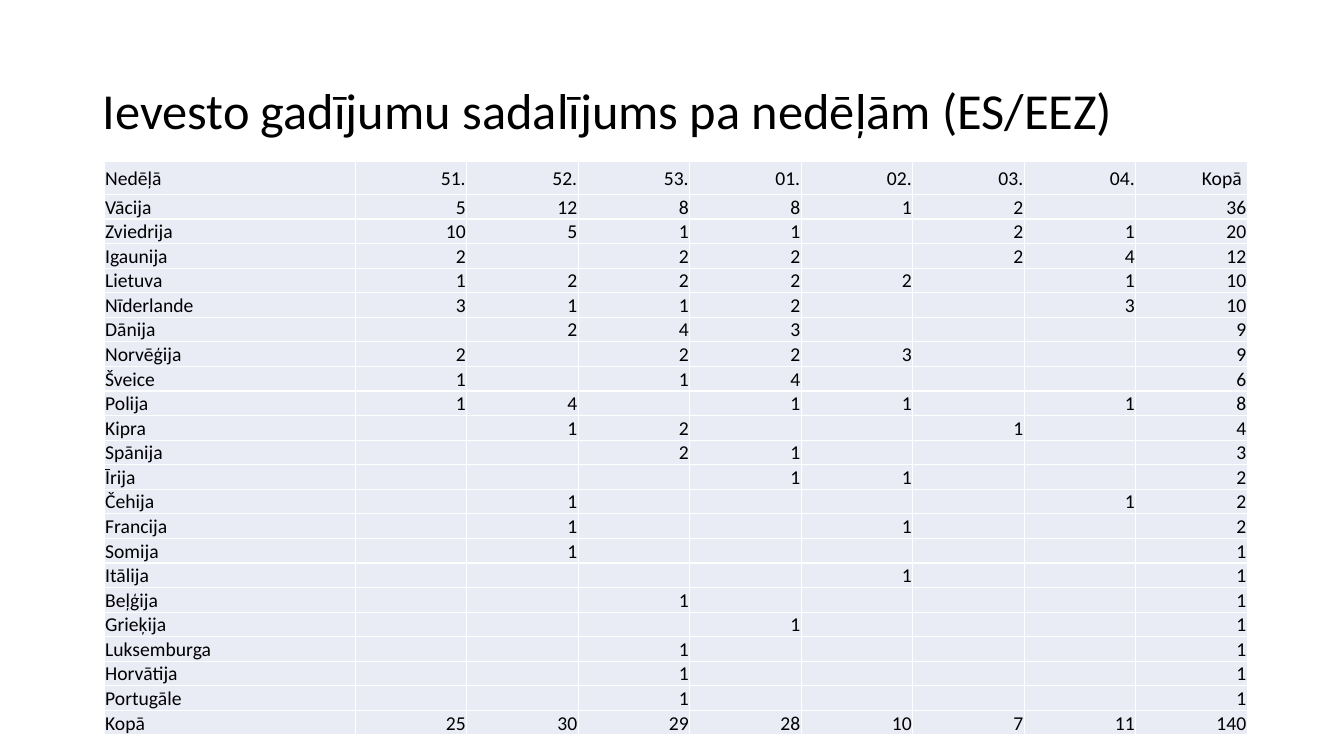
from dataclasses import dataclass

from lxml.etree import SubElement
from pptx import Presentation
from pptx.dml.color import RGBColor
from pptx.enum.text import MSO_ANCHOR, PP_ALIGN
from pptx.oxml.ns import qn
from pptx.util import Inches, Pt

COLORS = {"text": "000000", "cell": "E9EBF5", "border": "FFFFFF"}
FONT = "Calibri"
TITLE_SIZE, CELL_SIZE = 36, 14
SLIDE_W, SLIDE_H = Inches(13.33), Inches(7.5)
WEEKS = ["51.", "52.", "53.", "01.", "02.", "03.", "04."]


@dataclass
class Area:
    left: float
    top: float
    width: float
    height: float

    def box(self) -> tuple[int, int, int, int]:
        return (share_x(self.left), share_y(self.top),
                share_x(self.width), share_y(self.height))


@dataclass
class Country:
    name: str
    cases: tuple[int, ...]

    def texts(self) -> list[str]:
        counts = [str(n) if n else "" for n in self.cases]
        return [self.name, *counts, str(sum(self.cases))]


COUNTRIES = [
    Country("Vācija", (5, 12, 8, 8, 1, 2, 0)),
    Country("Zviedrija", (10, 5, 1, 1, 0, 2, 1)),
    Country("Igaunija", (2, 0, 2, 2, 0, 2, 4)),
    Country("Lietuva", (1, 2, 2, 2, 2, 0, 1)),
    Country("Nīderlande", (3, 1, 1, 2, 0, 0, 3)),
    Country("Dānija", (0, 2, 4, 3, 0, 0, 0)),
    Country("Norvēģija", (2, 0, 2, 2, 3, 0, 0)),
    Country("Šveice", (1, 0, 1, 4, 0, 0, 0)),
    Country("Polija", (1, 4, 0, 1, 1, 0, 1)),
    Country("Kipra", (0, 1, 2, 0, 0, 1, 0)),
    Country("Spānija", (0, 0, 2, 1, 0, 0, 0)),
    Country("Īrija", (0, 0, 0, 1, 1, 0, 0)),
    Country("Čehija", (0, 1, 0, 0, 0, 0, 1)),
    Country("Francija", (0, 1, 0, 0, 1, 0, 0)),
    Country("Somija", (0, 1, 0, 0, 0, 0, 0)),
    Country("Itālija", (0, 0, 0, 0, 1, 0, 0)),
    Country("Beļģija", (0, 0, 1, 0, 0, 0, 0)),
    Country("Grieķija", (0, 0, 0, 1, 0, 0, 0)),
    Country("Luksemburga", (0, 0, 1, 0, 0, 0, 0)),
    Country("Horvātija", (0, 0, 1, 0, 0, 0, 0)),
    Country("Portugāle", (0, 0, 1, 0, 0, 0, 0)),
]

TITLE_AREA = Area(6.9, 5.33, 86.27, 19.33)
TABLE_AREA = Area(7.75, 21.33, 85.07, 75.6)
NAME_COL = 18.68
HEADER_ROW = 4.4


def share_x(percent: float) -> int:
    return round(SLIDE_W * percent / 100)


def share_y(percent: float) -> int:
    return round(SLIDE_H * percent / 100)


def style_runs(p, size: int) -> None:
    for r in p.runs:
        r.font.name = FONT
        r.font.size = Pt(size)
        r.font.color.rgb = RGBColor.from_string(COLORS["text"])


def add_title(s, text: str) -> None:
    tf = s.shapes.add_textbox(*TITLE_AREA.box()).text_frame
    tf.word_wrap = True
    tf.vertical_anchor = MSO_ANCHOR.MIDDLE
    tf.text = text
    p = tf.paragraphs[0]
    p.line_spacing = 0.9
    style_runs(p, TITLE_SIZE)


def add_borders(cell) -> None:
    tc_pr = cell._tc.get_or_add_tcPr()
    for side in ("a:lnL", "a:lnR", "a:lnT", "a:lnB"):
        ln = SubElement(tc_pr, qn(side), w=str(Pt(1)))
        fill = SubElement(ln, qn("a:solidFill"))
        SubElement(fill, qn("a:srgbClr"), val=COLORS["border"])


def fill_cell(cell, text: str, align: PP_ALIGN) -> None:
    cell.margin_left = cell.margin_right = cell.margin_top = Inches(0.01)
    cell.margin_bottom = 0
    cell.vertical_anchor = MSO_ANCHOR.MIDDLE
    add_borders(cell)
    cell.fill.solid()
    cell.fill.fore_color.rgb = RGBColor.from_string(COLORS["cell"])
    p = cell.text_frame.paragraphs[0]
    p.alignment = align
    if text:
        p.text = text
        style_runs(p, CELL_SIZE)
    else:
        SubElement(p._p, qn("a:endParaRPr"), sz=str(CELL_SIZE * 100))


def add_case_table(s) -> None:
    totals = Country("Kopā", tuple(map(sum, zip(*(c.cases for c in COUNTRIES)))))
    rows = [["Nedēļā", *WEEKS, "Kopā "]]
    rows += [c.texts() for c in [*COUNTRIES, totals]]
    n_rows, n_cols = len(rows), len(rows[0])
    table = s.shapes.add_table(n_rows, n_cols, *TABLE_AREA.box()).table
    table.first_row = table.horz_banding = False
    count_col = (TABLE_AREA.width - NAME_COL) / (n_cols - 1)
    for i, col in enumerate(table.columns):
        col.width = share_x(count_col if i else NAME_COL)
    body_row = (TABLE_AREA.height - HEADER_ROW) / (n_rows - 1)
    for i, row in enumerate(table.rows):
        row.height = share_y(body_row if i else HEADER_ROW)
        for j, text in enumerate(rows[i]):
            fill_cell(row.cells[j], text, PP_ALIGN.RIGHT if j else PP_ALIGN.LEFT)


def main() -> None:
    prs = Presentation()
    prs.slide_width, prs.slide_height = SLIDE_W, SLIDE_H
    s = prs.slides.add_slide(prs.slide_layouts[6])
    add_title(s, "Ievesto gadījumu sadalījums pa nedēļām (ES/EEZ)")
    add_case_table(s)
    prs.save("out.pptx")


if __name__ == "__main__":
    main()
